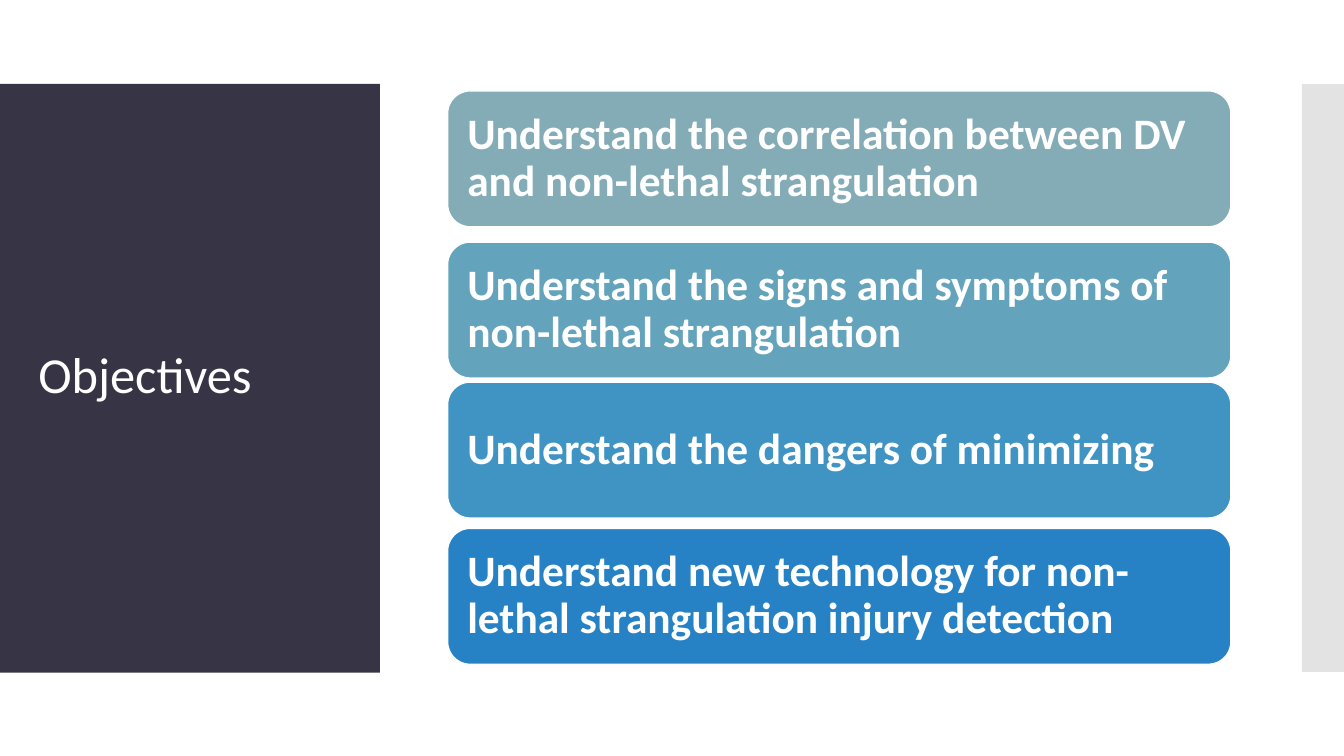
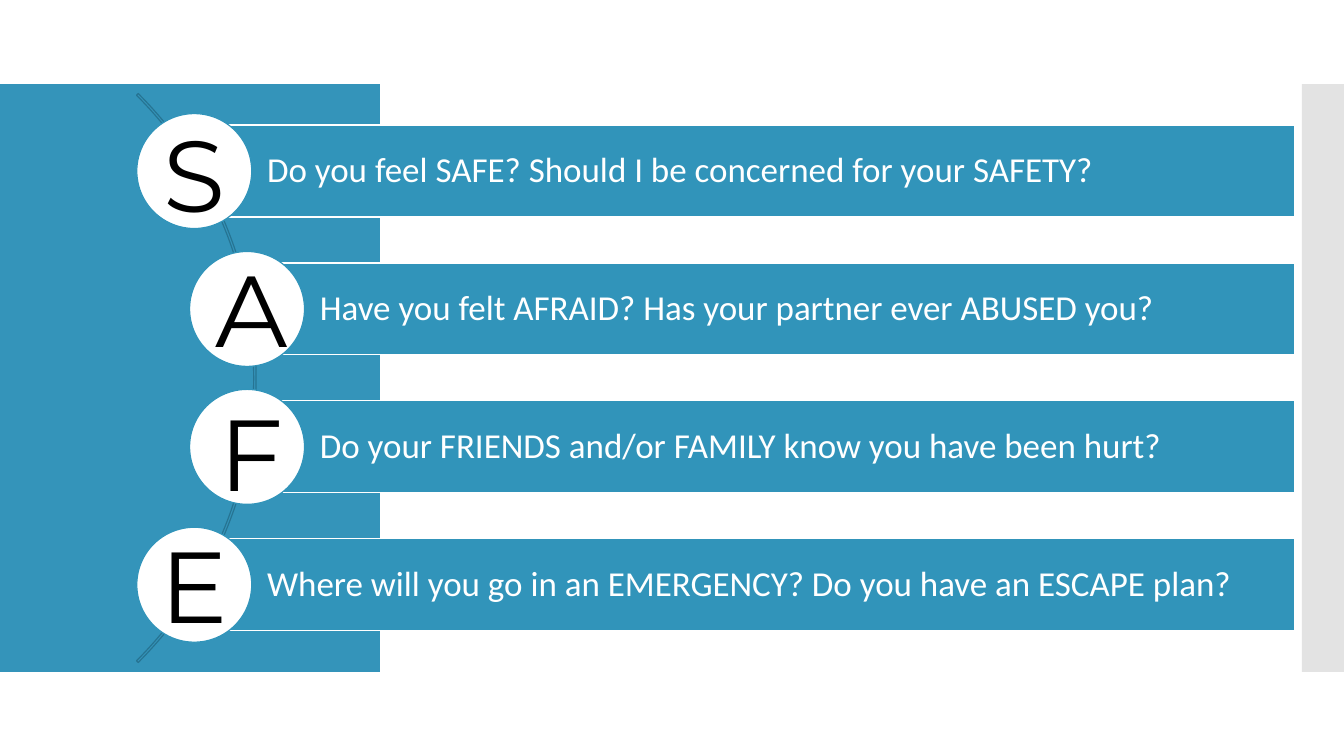
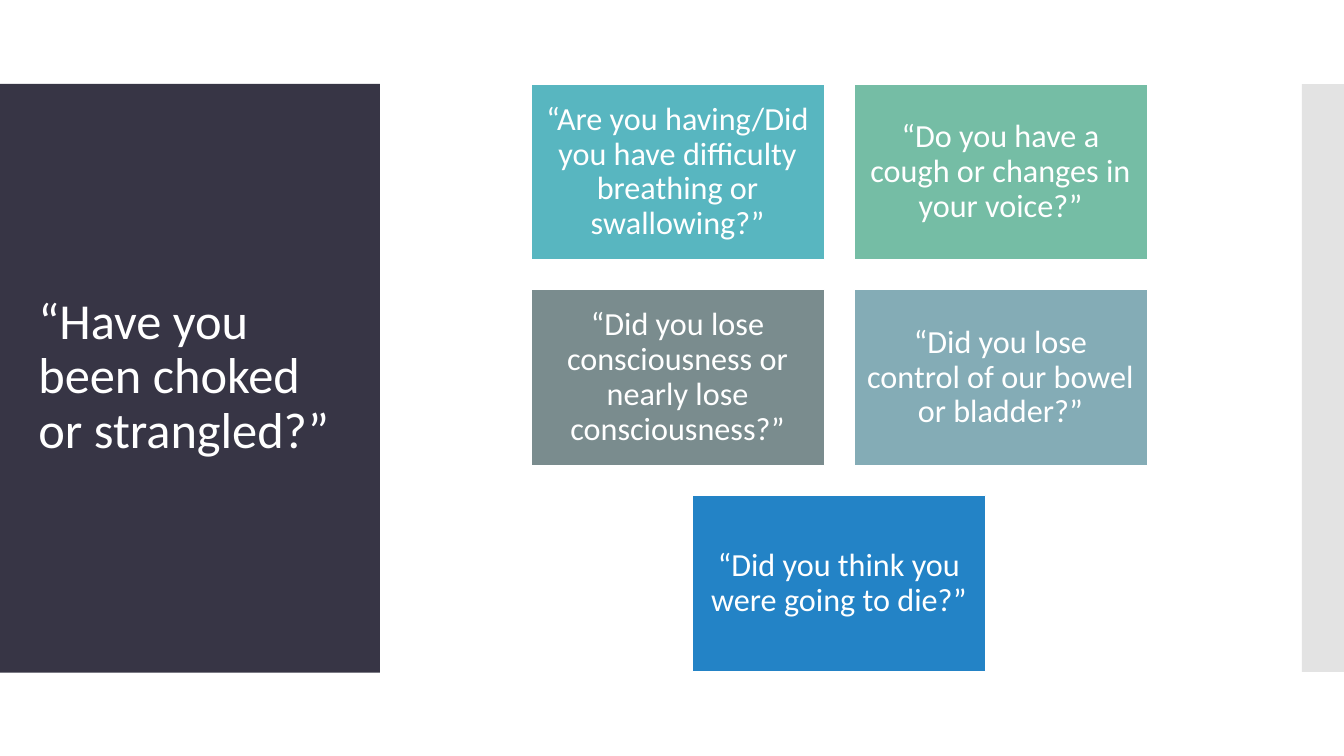
from dataclasses import dataclass

from lxml import etree
from pptx import Presentation
from pptx.dml.color import RGBColor
from pptx.enum.shapes import MSO_SHAPE
from pptx.enum.text import MSO_ANCHOR, MSO_AUTO_SIZE, PP_ALIGN
from pptx.oxml.ns import qn
from pptx.presentation import Presentation as Deck
from pptx.shapes.autoshape import Shape
from pptx.slide import Slide
from pptx.text.text import TextFrame
from pptx.util import Pt

RECTANGLE = MSO_SHAPE.RECTANGLE
ROUNDED = MSO_SHAPE.ROUNDED_RECTANGLE
OVAL = MSO_SHAPE.OVAL
BLOCK_ARC = MSO_SHAPE.BLOCK_ARC
LEFT, CENTER = PP_ALIGN.LEFT, PP_ALIGN.CENTER
MIDDLE, TOP = MSO_ANCHOR.MIDDLE, MSO_ANCHOR.TOP

WHITE = RGBColor(0xFF, 0xFF, 0xFF)
BLACK = RGBColor(0x00, 0x00, 0x00)
NAVY = RGBColor(0x37, 0x35, 0x45)
TEAL = RGBColor(0x34, 0x94, 0xBA)
BAR_TEAL = RGBColor(0x31, 0x94, 0xBA)
ARC_TEAL = RGBColor(0x26, 0x74, 0x93)
STRIP_GREY = RGBColor(0xC8, 0xC8, 0xC8)
MIST = RGBColor(0x84, 0xAC, 0xB6)
LAGOON = RGBColor(0x63, 0xA3, 0xBB)
SKY = RGBColor(0x40, 0x94, 0xC4)
BLUE = RGBColor(0x26, 0x82, 0xC4)
AQUA = RGBColor(0x58, 0xB6, 0xC0)
GREEN = RGBColor(0x75, 0xBD, 0xA5)
SLATE = RGBColor(0x7A, 0x8C, 0x8E)
ROYAL = RGBColor(0x23, 0x83, 0xC6)

BODY_FONT = "Calibri"
LETTER_FONT = "Montserrat"
SLIDE_WIDTH, SLIDE_HEIGHT = 960, 540
LINE_WIDTH = 0.85
TITLE_ONLY, BLANK = 5, 6


@dataclass(frozen=True)
class Box:
    """A rectangle in points."""
    left: float
    top: float
    width: float
    height: float


@dataclass(frozen=True)
class TextStyle:
    size: float
    color: RGBColor = WHITE
    font: str = BODY_FONT
    bold: bool = False
    align: PP_ALIGN = LEFT
    anchor: MSO_ANCHOR = MIDDLE
    spacing: float = 0.9
    margins: tuple[float, float, float, float] = (7.2, 3.6, 7.2, 3.6)


@dataclass(frozen=True)
class Objective:
    top: float
    color: RGBColor
    text: str


@dataclass(frozen=True)
class SafeRow:
    letter: str
    bar_left: float
    letter_left: float
    letter_top: float
    question: str


@dataclass(frozen=True)
class Card:
    color: RGBColor
    text: str


PANEL = Box(0, 60, 271.4, 420)
TITLE_PANEL = Box(0, 60, 271.4, 420.5)
STRIP = Box(930, 60, 30, 420)
TITLE_BOX = Box(20.2, 88.6, 231.8, 362.2)

TITLE_STYLE = TextStyle(36)
OBJECTIVE_STYLE = TextStyle(31, bold=True, margins=(9.3,) * 4)
QUESTION_STYLE = TextStyle(25, margins=(52, 5, 5, 5))
LETTER_STYLE = TextStyle(72, BLACK, LETTER_FONT, align=CENTER, anchor=TOP, spacing=1)
CARD_STYLE = TextStyle(23, align=CENTER, margins=(7,) * 4)

OBJECTIVES = (
    Objective(65, MIST, "Understand the correlation between DV and non-lethal strangulation"),
    Objective(173, LAGOON, "Understand the signs and symptoms of non-lethal strangulation"),
    Objective(273, SKY, "Understand the dangers of minimizing"),
    Objective(377.5, BLUE,
              "Understand new technology for non-lethal strangulation injury detection"),
)
SAFE_ROWS = (
    SafeRow("S", 138.8, 97.2, 76.3, "Do you feel SAFE? Should I be concerned for your SAFETY?"),
    SafeRow("A", 176.5, 138.2, 172.8, "Have you felt AFRAID? Has your partner ever ABUSED you?"),
    SafeRow("F", 176.5, 138.2, 275.8, "Do your FRIENDS and/or FAMILY know you have been hurt?"),
    SafeRow("E", 138.8, 97.2, 370.1,
            "Where will you go in an EMERGENCY? Do you have an ESCAPE plan?"),
)
CARD_ROWS = (
    (Card(AQUA, "“Are you having/Did you have difficulty breathing or swallowing?”"),
     Card(GREEN, "“Do you have a cough or changes in your voice?”")),
    (Card(SLATE, "“Did you lose consciousness or nearly lose consciousness?”"),
     Card(MIST, "“Did you lose control of our bowel or bladder?”")),
    (Card(ROYAL, "“Did you think you were going to die?”"),),
)


def write_text(frame: TextFrame, text: str, style: TextStyle) -> None:
    frame.word_wrap = True
    frame.auto_size = MSO_AUTO_SIZE.NONE
    frame.vertical_anchor = style.anchor
    (frame.margin_left, frame.margin_top,
     frame.margin_right, frame.margin_bottom) = map(Pt, style.margins)
    paragraph = frame.paragraphs[0]
    paragraph.alignment = style.align
    paragraph.line_spacing = style.spacing
    run = paragraph.add_run()
    run.text = text
    run.font.name = style.font
    run.font.size = Pt(style.size)
    run.font.bold = style.bold
    run.font.color.rgb = style.color


def add_block(slide: Slide, kind: MSO_SHAPE, box: Box,
              fill: RGBColor | None, line: RGBColor | None = None) -> Shape:
    shape = slide.shapes.add_shape(
        kind, Pt(box.left), Pt(box.top), Pt(box.width), Pt(box.height))
    shape.shadow.inherit = False
    if fill is None:
        shape.fill.background()
    else:
        shape.fill.solid()
        shape.fill.fore_color.rgb = fill
    if line is None:
        shape.line.fill.background()
    else:
        shape.line.color.rgb = line
        shape.line.width = Pt(LINE_WIDTH)
    return shape


def add_master_bands(presentation: Deck, slide: Slide) -> None:
    """Draw the side bands on a slide, then move them to the master."""
    panel = add_block(slide, RECTANGLE, PANEL, TEAL)
    strip = add_block(slide, RECTANGLE, STRIP, STRIP_GREY)
    strip_color = strip.element.find(".//" + qn("a:srgbClr"))
    etree.SubElement(strip_color, qn("a:alpha"), val="50000")
    master_tree = presentation.slide_master.shapes.element
    for number, band in enumerate((panel, strip)):
        band.element.find(".//" + qn("p:cNvPr")).set("id", str(100 + number))
        master_tree.insert(2 + number, band.element)


def add_titled_slide(presentation: Deck, text: str) -> Slide:
    slide = presentation.slides.add_slide(presentation.slide_layouts[TITLE_ONLY])
    title = slide.shapes.title
    title.left, title.top = Pt(TITLE_BOX.left), Pt(TITLE_BOX.top)
    title.width, title.height = Pt(TITLE_BOX.width), Pt(TITLE_BOX.height)
    write_text(title.text_frame, text, TITLE_STYLE)
    panel = add_block(slide, RECTANGLE, TITLE_PANEL, NAVY)
    title.element.addprevious(panel.element)
    return slide


def add_objectives(slide: Slide) -> None:
    for objective in OBJECTIVES:
        box = Box(319.8, objective.top, 559.4, 97)
        shape = add_block(slide, ROUNDED, box, objective.color, WHITE)
        write_text(shape.text_frame, objective.text, OBJECTIVE_STYLE)


def add_safe_rows(slide: Slide) -> None:
    arc = add_block(slide, BLOCK_ARC, Box(-391.7, -17.3, 574.6, 574.6), None, ARC_TEAL)
    for index, value in enumerate((189, 27, 0.003)):
        arc.adjustments[index] = value

    bar_right, bar_height, diameter = 925, 65.7, 82.1
    first_center, pitch = 122.2, 98.5
    for index, row in enumerate(SAFE_ROWS):
        center = first_center + index * pitch
        bar_box = Box(row.bar_left, center - bar_height / 2,
                      bar_right - row.bar_left, bar_height)
        bar = add_block(slide, RECTANGLE, bar_box, BAR_TEAL, WHITE)
        write_text(bar.text_frame, row.question, QUESTION_STYLE)
        circle_box = Box(row.bar_left - diameter / 2, center - diameter / 2,
                         diameter, diameter)
        add_block(slide, OVAL, circle_box, WHITE, BAR_TEAL)
        letter = slide.shapes.add_textbox(
            Pt(row.letter_left), Pt(row.letter_top), Pt(82.8), Pt(94.3))
        write_text(letter.text_frame, row.letter, LETTER_STYLE)


def add_cards(slide: Slide) -> None:
    """Draw the question cards, each row centred on the same axis."""
    axis, top, width, height, gap = 599.4, 60, 209.5, 125.7, 21.2
    for row_index, cards in enumerate(CARD_ROWS):
        row_width = len(cards) * (width + gap) - gap
        for column, card in enumerate(cards):
            box = Box(axis - row_width / 2 + column * (width + gap),
                      top + row_index * (height + gap), width, height)
            shape = add_block(slide, RECTANGLE, box, card.color, WHITE)
            write_text(shape.text_frame, card.text, CARD_STYLE)


def main() -> None:
    presentation = Presentation()
    presentation.slide_width = Pt(SLIDE_WIDTH)
    presentation.slide_height = Pt(SLIDE_HEIGHT)

    objectives_slide = add_titled_slide(presentation, "Objectives")
    add_master_bands(presentation, objectives_slide)
    add_objectives(objectives_slide)

    safe_slide = presentation.slides.add_slide(presentation.slide_layouts[BLANK])
    add_safe_rows(safe_slide)

    add_cards(add_titled_slide(presentation, "“Have you been choked or strangled?”"))
    presentation.save("out.pptx")


if __name__ == "__main__":
    main()
